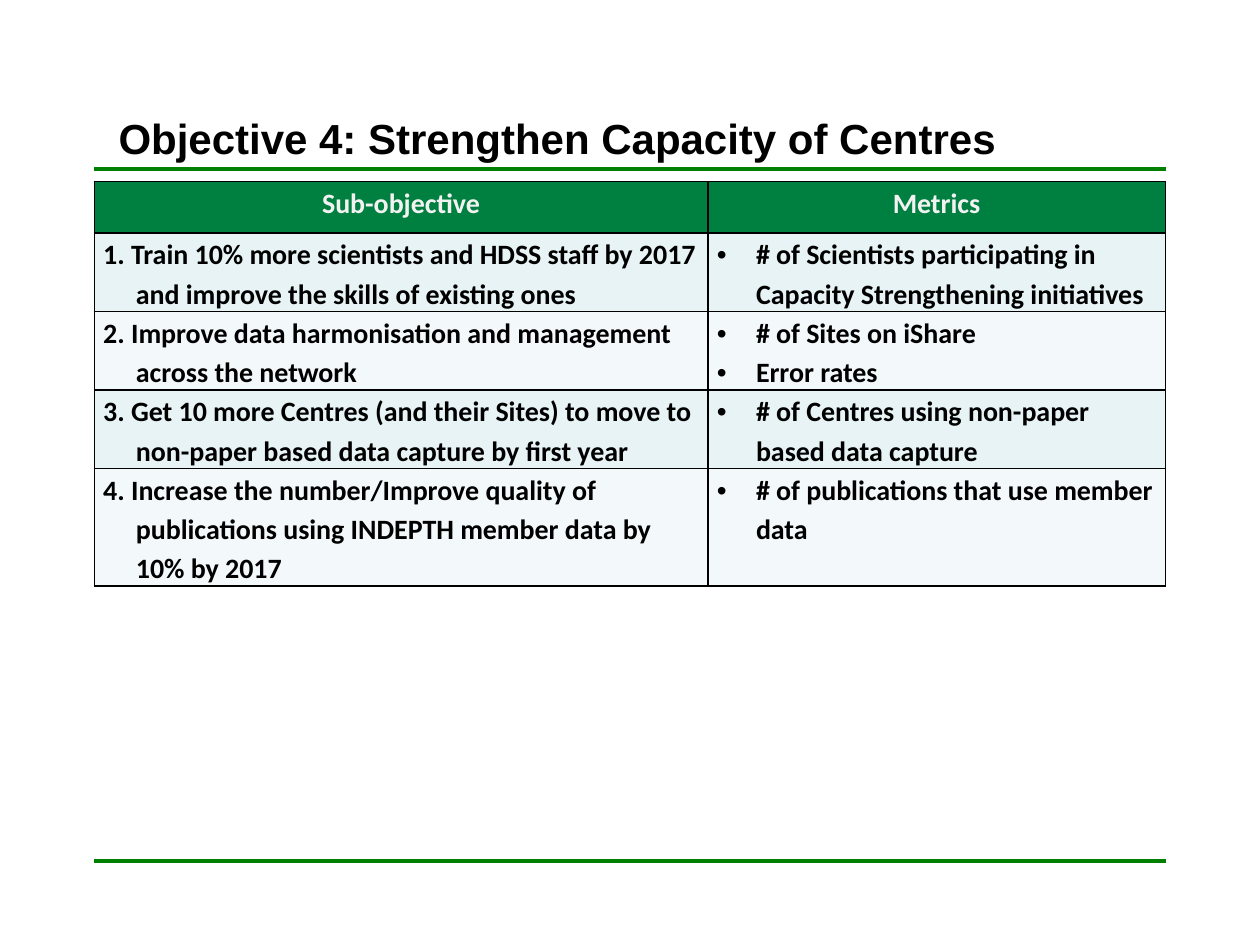
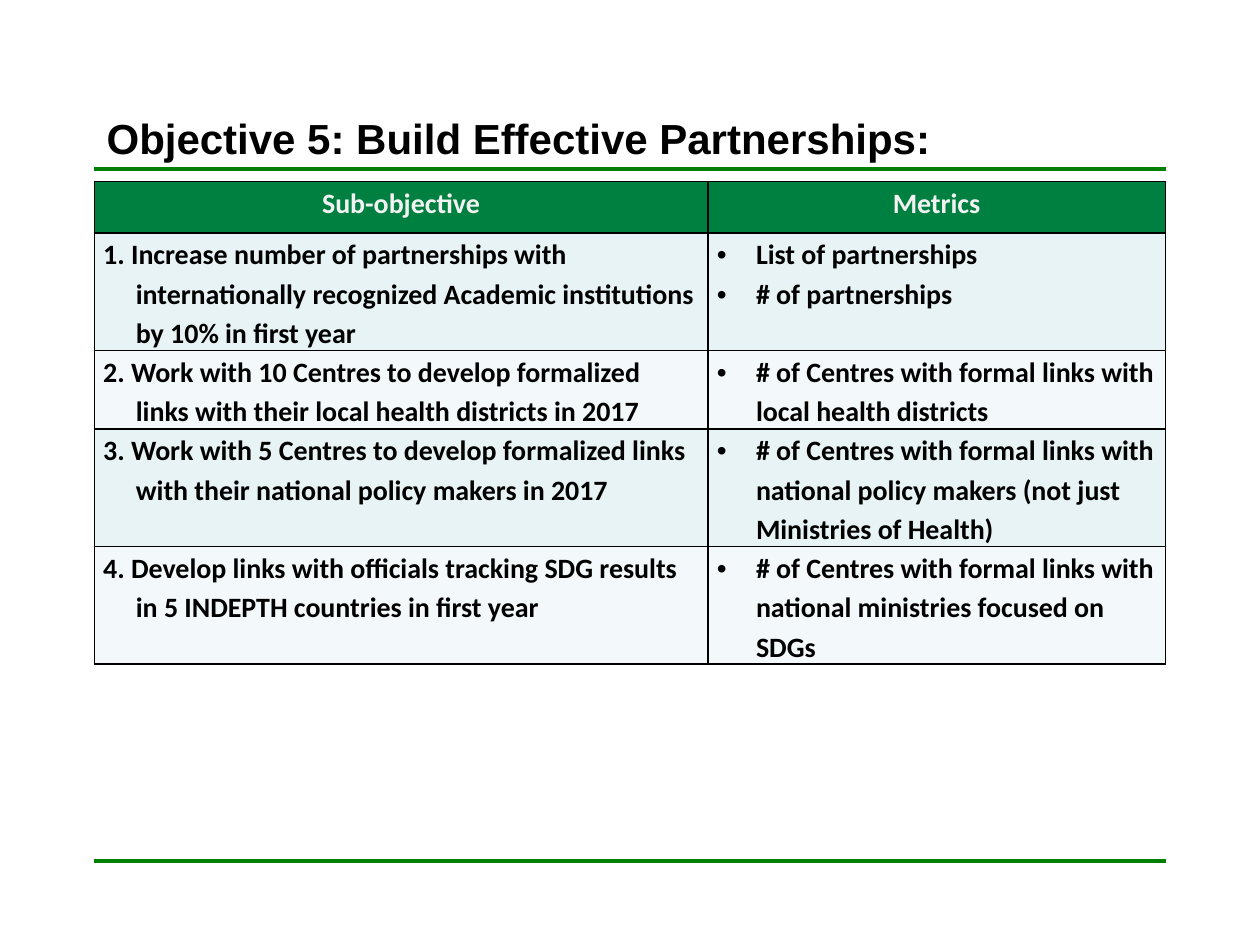
import pptx
import pptx.dml.color
import pptx.enum.shapes
import pptx.enum.text
import pptx.oxml.ns
import pptx.util
from lxml import etree

Cm, Pt = pptx.util.Cm, pptx.util.Pt
RGBColor = pptx.dml.color.RGBColor
ALIGN = pptx.enum.text.PP_ALIGN

HEADERS = ("Sub-objective", "Metrics")
SLIDES = [
    {
        "title": "Objective 4: Strengthen Capacity of Centres",
        "title_indent": 0.24,
        "rows": [
            (2, "1. Train 10% more scientists and HDSS staff by 2017 and improve the skills of existing ones",
             ["# of Scientists participating in Capacity Strengthening initiatives"]),
            (2, "2. Improve data harmonisation and management across the network",
             ["# of Sites on iShare", "Error rates"]),
            (2, "3. Get 10 more Centres (and their Sites) to move to non-paper based data capture by first year",
             ["# of Centres using non-paper based data capture"]),
            (3, "4. Increase the number/Improve quality of publications using INDEPTH member data by 10% by 2017",
             ["# of publications that use member data"]),
        ],
    },
    {
        "title": "Objective 5: Build Effective Partnerships:",
        "title_indent": 0,
        "rows": [
            (3, "1. Increase number of partnerships with internationally recognized Academic institutions "
                "by 10% in first year",
             ["List of partnerships", "# of partnerships"]),
            (2, "2. Work with 10 Centres to develop formalized links with their local health districts in 2017",
             ["# of Centres with formal links with local health districts"]),
            (3, "3. Work with 5 Centres to develop formalized links with their national policy makers in 2017",
             ["# of Centres with formal links with national policy makers (not just Ministries of Health)"]),
            (3, "4. Develop links with officials tracking SDG results in 5 INDEPTH countries in first year",
             ["# of Centres with formal links with national ministries focused on SDGs"]),
        ],
    },
]

BLACK = RGBColor(0x00, 0x00, 0x00)
RULE_GREEN = RGBColor(0x00, 0x80, 0x00)
HEADER_GREEN = RGBColor(0x00, 0x80, 0x40)
HEADER_TEXT = RGBColor(0xF2, 0xF2, 0xF2)
BANDS = (RGBColor(0xE7, 0xF3, 0xF4), RGBColor(0xF3, 0xF9, 0xFA))

LEFT, WIDTH = 1.9, 21.6
TITLE_TOP, TITLE_HEIGHT = 1.07, 2.33
RULES = (17.35, TITLE_TOP + TITLE_HEIGHT)
TABLE_TOP = 3.66
COLUMNS = (12.37, 9.22)
HEADER_HEIGHT, LINE_HEIGHT = 1.04, 0.79
NUMBER_INDENT, BULLET_INDENT = 0.66, 0.79


def write(tf, texts, font="Calibri", size=16, color=BLACK, align=ALIGN.LEFT,
          spacing=1.15, margin=0, hanging=0, bullet=None):
    for i, text in enumerate(texts):
        p = tf.paragraphs[0] if i == 0 else tf.add_paragraph()
        p.alignment, p.line_spacing = align, spacing
        pPr = p._p.get_or_add_pPr()
        pPr.set("marL", str(Cm(margin)))
        pPr.set("indent", str(-Cm(hanging)))
        if bullet:
            etree.SubElement(pPr, pptx.oxml.ns.qn("a:buFont"), typeface="Arial")
            etree.SubElement(pPr, pptx.oxml.ns.qn("a:buChar"), char=bullet)
        r = p.add_run()
        r.text = text
        r.font.name, r.font.size, r.font.bold = font, Pt(size), True
        r.font.color.rgb = color


def add_rule(s, y):
    line = s.shapes.add_connector(pptx.enum.shapes.MSO_CONNECTOR.STRAIGHT,
                                  Cm(LEFT), Cm(y), Cm(LEFT + WIDTH), Cm(y))
    line.line.color.rgb, line.line.width = RULE_GREEN, Pt(2.25)
    etree.SubElement(line._element.spPr, pptx.oxml.ns.qn("a:effectLst"))


def add_title(s, title, indent):
    box = s.shapes.add_textbox(Cm(LEFT), Cm(TITLE_TOP), Cm(WIDTH), Cm(TITLE_HEIGHT))
    tf = box.text_frame
    tf.word_wrap = True
    tf.vertical_anchor = pptx.enum.text.MSO_ANCHOR.BOTTOM
    write(tf, [title], font="Arial", size=24, spacing=1.0, margin=indent)


def format_cell(cell, fill):
    tcPr = cell._tc.get_or_add_tcPr()
    for side in ("lnL", "lnR", "lnT", "lnB"):
        ln = etree.SubElement(tcPr, pptx.oxml.ns.qn("a:" + side), w=str(Pt(1)))
        solid = etree.SubElement(ln, pptx.oxml.ns.qn("a:solidFill"))
        etree.SubElement(solid, pptx.oxml.ns.qn("a:srgbClr"), val=str(BLACK))
    cell.fill.solid()
    cell.fill.fore_color.rgb = fill
    cell.margin_left = cell.margin_right = Cm(0.18)
    cell.margin_top = cell.margin_bottom = 0


def add_objectives(s, rows):
    heights = [HEADER_HEIGHT] + [lines * LINE_HEIGHT for lines, _, _ in rows]
    table = s.shapes.add_table(len(heights), len(COLUMNS), Cm(LEFT), Cm(TABLE_TOP),
                               Cm(sum(COLUMNS)), Cm(sum(heights))).table
    for column, width in zip(table.columns, COLUMNS):
        column.width = Cm(width)
    for row, height in zip(table.rows, heights):
        row.height = Cm(height)
    for c, header in enumerate(HEADERS):
        cell = table.cell(0, c)
        format_cell(cell, HEADER_GREEN)
        write(cell.text_frame, [header], color=HEADER_TEXT, align=ALIGN.CENTER)
    for i, (_, objective, metrics) in enumerate(rows):
        left, right = table.cell(i + 1, 0), table.cell(i + 1, 1)
        for cell in (left, right):
            format_cell(cell, BANDS[i % 2])
        write(left.text_frame, [objective], margin=NUMBER_INDENT, hanging=NUMBER_INDENT)
        write(right.text_frame, metrics, margin=BULLET_INDENT, hanging=BULLET_INDENT, bullet="•")


def main():
    prs = pptx.Presentation()
    prs.slide_width, prs.slide_height = Cm(25.4), Cm(19.05)
    for content in SLIDES:
        s = prs.slides.add_slide(prs.slide_layouts[6])
        for y in RULES:
            add_rule(s, y)
        add_title(s, content["title"], content["title_indent"])
        add_objectives(s, content["rows"])
    prs.save("out.pptx")


if __name__ == "__main__":
    main()
